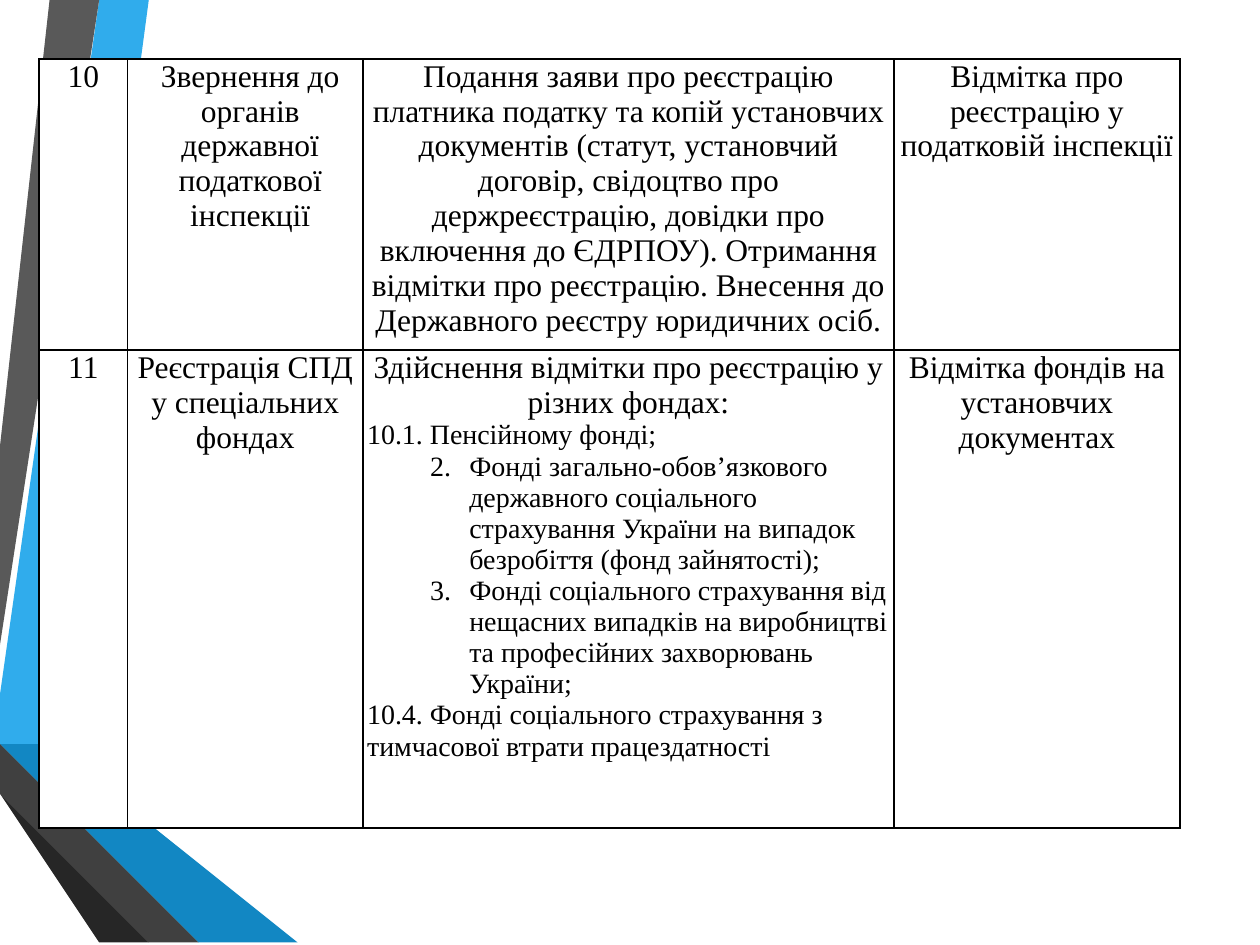
from lxml.etree import SubElement
from pptx import Presentation
from pptx.dml.color import RGBColor
from pptx.enum.text import PP_ALIGN
from pptx.oxml.ns import qn
from pptx.util import Cm, Pt

COLORS = {
    "sky": "30ACEC", "grey": "595959", "black_edge": "262626",
    "navy_edge": "0C5A82", "blue": "1287C3", "charcoal": "404040",
    "ink": "000000", "paper": "FFFFFF",
}
FONT = {"name": "Times New Roman", "size": Pt(18)}
MARGINS = {"margin_left": Cm(0.08), "margin_right": Cm(0.08),
           "margin_top": 0, "margin_bottom": 0}

# Paragraph styles: alignment, size, left margin and first-line indent in cm
STYLES = {
    "centre": (PP_ALIGN.CENTER, 18, 0, 0),
    "inset": (PP_ALIGN.CENTER, 18, 0.2, 0),
    "plain": (PP_ALIGN.LEFT, 16, 0, 0),
    "number": (PP_ALIGN.LEFT, 16, 2.06, -0.79),
}

deck = Presentation()
deck.slide_width, deck.slide_height = Cm(25.4), Cm(19.05)
slide = deck.slides.add_slide(deck.slide_layouts[6])

# Ribbons along the left edge, outlines in cm
RIBBONS = [
    ("sky", [(0, 13.82), (0, 14.6), (0.56, 14.71), (2.97, 0), (2.26, 0)]),
    ("grey", [(2.11, 0), (1.4, 0), (0, 8.53), (0, 12.85)]),
    ("black_edge", [(0, 15.72), (0, 15.77), (2.36, 19.05), (2.51, 19.05)]),
    ("navy_edge", [(0, 14.71), (0, 14.73), (3.96, 19.05), (4.14, 19.05)]),
    ("blue", [(0, 14.71), (4.14, 19.05), (5.92, 19.05), (0.56, 14.71), (0, 14.6)]),
    ("charcoal", [(0, 15.72), (2.51, 19.05), (3.84, 19.05), (0, 14.88)]),
]
for color, points in RIBBONS:
    builder = slide.shapes.build_freeform(*points[0], scale=Cm(1))
    builder.add_line_segments(points[1:], close=True)
    ribbon = builder.convert_to_shape()
    ribbon.shadow.inherit = False
    ribbon.fill.solid()
    ribbon.fill.fore_color.rgb = RGBColor.from_string(COLORS[color])
    ribbon.line.fill.background()

# Registration steps: each cell is a list of (style, text)
STEPS = [
    [
        [("centre", "10")],
        [("inset", "Звернення до органів державної податкової інспекції")],
        [("centre", "Подання заяви про реєстрацію платника податку та копій "
          "установчих документів (статут, установчий договір, свідоцтво про "
          "держреєстрацію, довідки про включення до ЄДРПОУ). Отримання відмітки "
          "про реєстрацію. Внесення до Державного реєстру юридичних осіб.")],
        [("centre", "Відмітка про реєстрацію у податковій інспекції")],
    ],
    [
        [("centre", "11")],
        [("centre", "Реєстрація СПД у спеціальних фондах")],
        [("centre", "Здійснення відмітки про реєстрацію у різних фондах:"),
         ("plain", "10.1. Пенсійному фонді;"),
         ("number", "Фонді загально-обов’язкового державного соціального "
          "страхування України на випадок безробіття (фонд зайнятості);"),
         ("number", "Фонді соціального страхування від нещасних випадків на "
          "виробництві та професійних захворювань України;"),
         ("plain", "10.4. Фонді соціального страхування з тимчасової втрати "
          "працездатності")],
        [("centre", "Відмітка фондів на установчих документах")],
    ],
]
WIDTHS = [1.78, 4.75, 10.7, 5.77]
HEIGHTS = [5.87, 9.63]

table = slide.shapes.add_table(
    len(HEIGHTS), len(WIDTHS), Cm(0.79), Cm(1.19),
    Cm(sum(WIDTHS)), Cm(sum(HEIGHTS))).table
table.first_row = table.horz_banding = False
for column, width in zip(table.columns, WIDTHS):
    column.width = Cm(width)
for row, height in zip(table.rows, HEIGHTS):
    row.height = Cm(height)

for row, step in zip(table.rows, STEPS):
    for cell, lines in zip(row.cells, step):
        for name, value in MARGINS.items():
            setattr(cell, name, value)

        # Borders come before the fill in the cell properties
        properties = cell._tc.get_or_add_tcPr()
        for side in ("lnL", "lnR", "lnT", "lnB"):
            border = SubElement(properties, qn(f"a:{side}"), w=str(Pt(1)))
            fill = SubElement(border, qn("a:solidFill"))
            SubElement(fill, qn("a:srgbClr"), val=COLORS["ink"])
        cell.fill.solid()
        cell.fill.fore_color.rgb = RGBColor.from_string(COLORS["paper"])

        frame = cell.text_frame
        for index, (style, text) in enumerate(lines):
            para = frame.add_paragraph() if index else frame.paragraphs[0]
            alignment, size, left, indent = STYLES[style]
            para.alignment = alignment
            layout = para._p.get_or_add_pPr()
            layout.set("marL", str(Cm(left)))
            layout.set("indent", str(Cm(indent)))
            if style == "number":
                para.level = 1
                SubElement(layout, qn("a:buFont"), typeface="+mj-lt")
                SubElement(layout, qn("a:buAutoNum"),
                           type="arabicPeriod", startAt="2")
            span = para.add_run()
            span.text = text
            for name, value in {**FONT, "size": Pt(size)}.items():
                setattr(span.font, name, value)
            span.font.color.rgb = RGBColor.from_string(COLORS["ink"])

deck.save("out.pptx")
